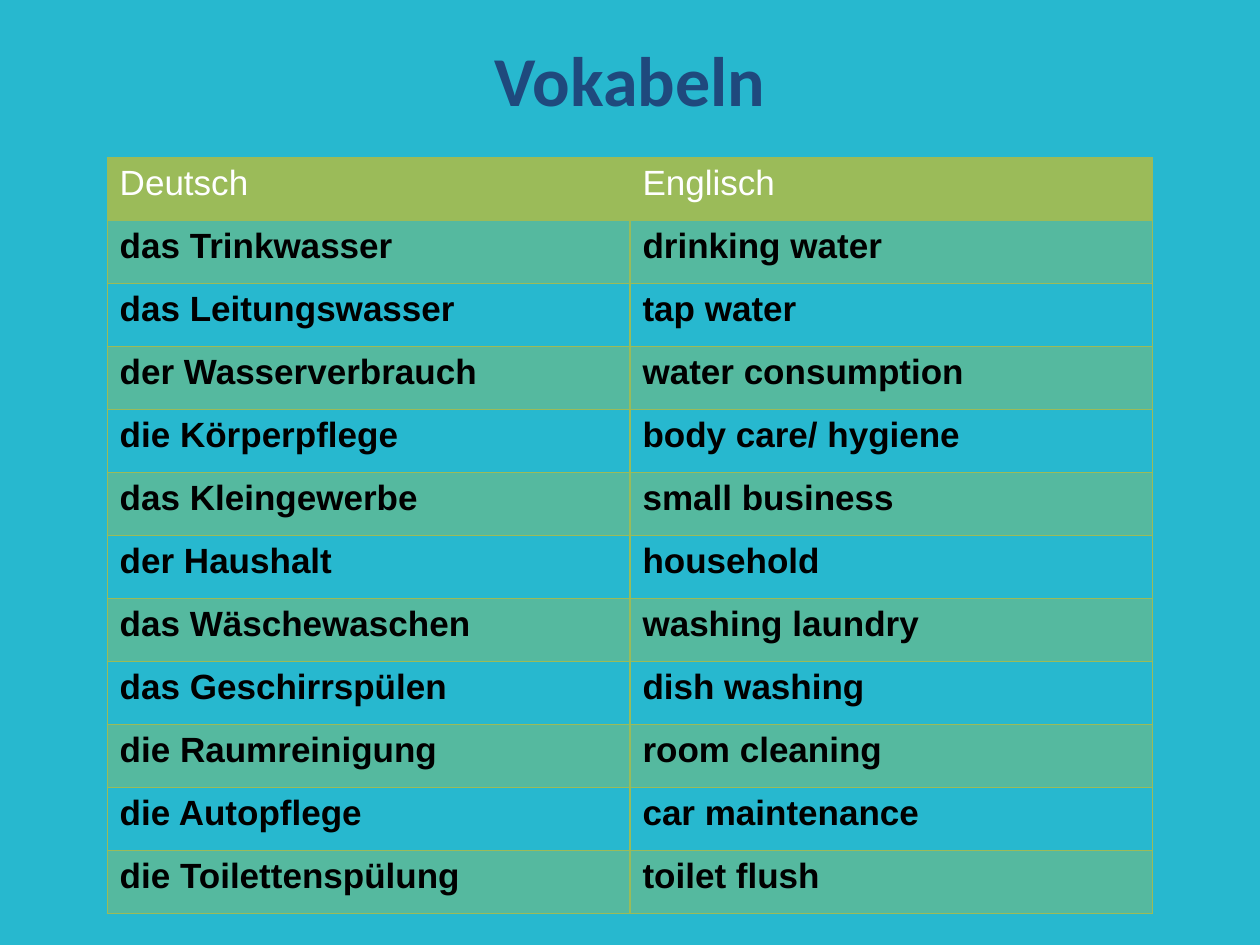
import lxml.etree
import pptx
import pptx.dml.color
import pptx.enum.text
import pptx.oxml.ns
import pptx.util

Cm = pptx.util.Cm
COLORS = {"back": "27B8CF", "title": "1F497D", "green": "9BBB59",
          "white": "FFFFFF", "black": "000000"}
WORDS = [
    ("Deutsch", "Englisch"),
    ("das Trinkwasser", "drinking water"),
    ("das Leitungswasser", "tap water"),
    ("der Wasserverbrauch", "water consumption"),
    ("die Körperpflege", "body care/ hygiene"),
    ("das Kleingewerbe", "small business"),
    ("der Haushalt", "household"),
    ("das Wäschewaschen", "washing laundry"),
    ("das Geschirrspülen", "dish washing"),
    ("die Raumreinigung", "room cleaning"),
    ("die Autopflege", "car maintenance"),
    ("die Toilettenspülung", "toilet flush"),
]


def color(name):
    return pptx.dml.color.RGBColor.from_string(COLORS[name])


def write(frame, text, size=20, font="Arial", ink="black", bold=True, align=None):
    para = frame.paragraphs[0]
    para.alignment = align
    run = para.add_run()
    run.text = text
    run.font.size = pptx.util.Pt(size)
    run.font.name = font
    run.font.bold = bold
    run.font.color.rgb = color(ink)


def node(parent, tag, **attrs):
    return lxml.etree.SubElement(parent, pptx.oxml.ns.qn(tag), attrs)


def border(cell, name, width=0.75):
    props = cell._tc.get_or_add_tcPr()
    for side in "LRTB":
        line = node(props, f"a:ln{side}", w=str(pptx.util.Pt(width)))
        node(node(line, "a:solidFill"), "a:srgbClr", val=COLORS[name])


def paint(cell, name, alpha=100):
    cell.fill.solid()
    cell.fill.fore_color.rgb = color(name)
    if alpha < 100:
        tint = cell._tc.tcPr.find(pptx.oxml.ns.qn("a:solidFill"))[0]
        node(tint, "a:alpha", val=str(alpha * 1000))


def heading(slide, left, top, width, height):
    title = slide.shapes.title
    title.left, title.top, title.width, title.height = left, top, width, height
    frame = title.text_frame
    frame.vertical_anchor = pptx.enum.text.MSO_ANCHOR.MIDDLE
    write(frame, "Vokabeln", size=40, font="Calibri", ink="title",
          align=pptx.enum.text.PP_ALIGN.CENTER)


def glossary(slide, left, top, width, height):
    table = slide.shapes.add_table(
        len(WORDS), len(WORDS[0]), left, top, width, height).table
    for i, pair in enumerate(WORDS):
        for j, word in enumerate(pair):
            cell = table.cell(i, j)
            border(cell, "green")
            if i == 0:
                paint(cell, "green")
            elif i % 2:
                paint(cell, "green", alpha=40)
            else:
                cell.fill.background()
            write(cell.text_frame, word, ink="black" if i else "white", bold=i > 0)


def main():
    deck = pptx.Presentation()
    deck.slide_width, deck.slide_height = Cm(25.4), Cm(19.05)
    slide = deck.slides.add_slide(deck.slide_layouts[5])
    slide.background.fill.solid()
    slide.background.fill.fore_color.rgb = color("back")
    heading(slide, Cm(1.27), Cm(0), Cm(22.86), Cm(3.18))
    glossary(slide, Cm(2.16), Cm(3.18), Cm(21.08), Cm(1.27 * len(WORDS)))
    deck.save("out.pptx")


if __name__ == "__main__":
    main()
